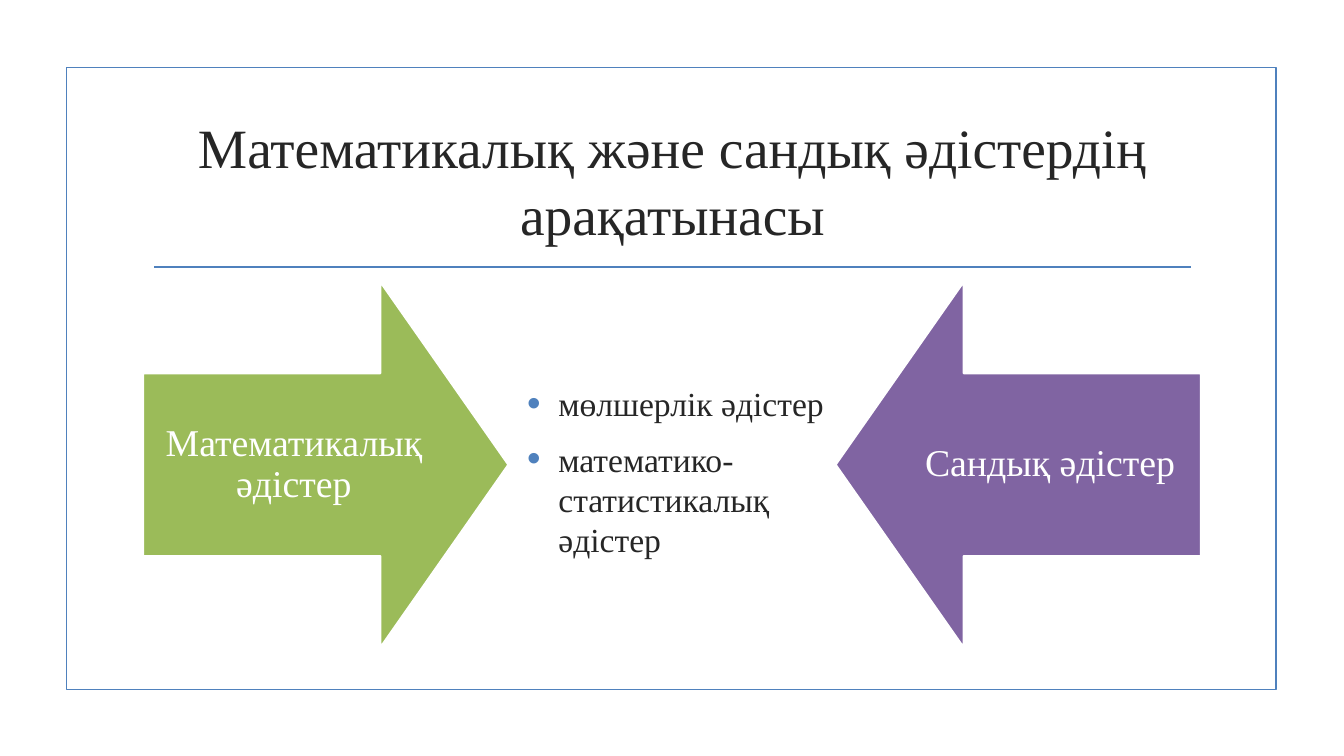
from dataclasses import dataclass

from lxml.etree import SubElement
from pptx import Presentation
from pptx.dml.color import RGBColor
from pptx.enum.shapes import MSO_CONNECTOR, MSO_SHAPE
from pptx.enum.text import MSO_ANCHOR, PP_ALIGN
from pptx.oxml.ns import qn
from pptx.util import Inches, Pt


@dataclass(frozen=True)
class Theme:
    font: str = "Times New Roman"
    ink: str = "262626"
    white: str = "FFFFFF"
    blue: str = "4F81BD"
    green: str = "9BBB59"
    violet: str = "8064A2"
    title: float = 39.6
    label: float = 27
    body: float = 24
    line: float = 1.25


THEME = Theme()


def apply(target, values):
    for name, value in values.items():
        setattr(target, name, value)


def stroke(line, color):
    line.color.rgb = RGBColor.from_string(color)
    line.width = Pt(THEME.line)


def add_text(slide, box, lines, size, color, frame, para):
    area = slide.shapes.add_textbox(*map(Inches, box)).text_frame
    apply(area, {"word_wrap": True, **frame})
    for index, line in enumerate(lines):
        part = area.paragraphs[0] if index == 0 else area.add_paragraph()
        run = part.add_run()
        run.text = line
        apply(part, para)
        apply(run.font, {"name": THEME.font, "size": Pt(size)})
        run.font.color.rgb = RGBColor.from_string(color)
    return area


def add_bullet(part):
    props = part._p.get_or_add_pPr()
    apply_indent = {"marL": Inches(0.31), "indent": -Inches(0.31)}
    for name, value in apply_indent.items():
        props.set(name, str(value))
    tint = SubElement(props, qn("a:buClr"))
    SubElement(tint, qn("a:srgbClr"), val=THEME.blue)
    SubElement(props, qn("a:buSzPct"), val="115000")
    SubElement(props, qn("a:buFont"), typeface="Arial")
    SubElement(props, qn("a:buChar"), char="•")


def draw_frame(slide, box):
    frame = slide.shapes.add_shape(MSO_SHAPE.RECTANGLE, *map(Inches, box))
    frame.shadow.inherit = False
    frame.fill.background()
    stroke(frame.line, THEME.blue)


def draw_title(slide, box, text):
    left, top, width, height = box
    add_text(slide, box, [text], THEME.title, THEME.ink,
             {"vertical_anchor": MSO_ANCHOR.MIDDLE},
             {"alignment": PP_ALIGN.CENTER})
    inset, level = 0.11, top + height + 0.15
    ends = (left + inset, level, left + width - inset, level)
    rule = slide.shapes.add_connector(MSO_CONNECTOR.STRAIGHT, *map(Inches, ends))
    stroke(rule.line, THEME.blue)
    SubElement(rule._element.spPr, qn("a:effectLst"))


def draw_arrow(slide, box, text, color, turn):
    left, top, width, height = box
    arrow = slide.shapes.add_shape(MSO_SHAPE.DOWN_ARROW, *map(Inches, box))
    arrow.shadow.inherit = False
    arrow.rotation = turn
    arrow.adjustments[0] = 0.5
    arrow.adjustments[1] = 0.35
    arrow.fill.solid()
    arrow.fill.fore_color.rgb = RGBColor.from_string(color)
    stroke(arrow.line, THEME.white)
    span = 2.99
    start = left if turn == 270 else left + width - span
    pad = Inches(0.2)
    sides = ("left", "top", "right", "bottom")
    add_text(slide, (start, top + height / 4, span, height / 2),
             [text], THEME.label, THEME.white,
             {"vertical_anchor": MSO_ANCHOR.MIDDLE,
              **{f"margin_{side}": pad for side in sides}},
             {"alignment": PP_ALIGN.CENTER, "line_spacing": 0.9})


def draw_list(slide, box, lines):
    area = add_text(slide, box, lines, THEME.body, THEME.ink,
                    {"vertical_anchor": MSO_ANCHOR.TOP},
                    {"space_after": Pt(6)})
    for part in area.paragraphs[1:]:
        part.space_before = Pt(THEME.body * 0.2)
    for part in area.paragraphs:
        add_bullet(part)


def main():
    deck = Presentation()
    apply(deck, {"slide_width": Inches(13.33), "slide_height": Inches(7.5)})
    slide = deck.slides.add_slide(deck.slide_layouts[6])
    draw_frame(slide, (0.66, 0.67, 12, 6.17))
    draw_title(slide, (1.42, 1.07, 10.5, 1.43),
               "Математикалық және сандық әдістердің арақатынасы")
    arrows = (
        (1.42, "Математикалық әдістер", THEME.green, 270),
        (8.29, "Сандық әдістер", THEME.violet, 90),
    )
    for left, text, color, turn in arrows:
        draw_arrow(slide, (left, 2.8, 3.62, 3.62), text, color, turn)
    draw_list(slide, (5.13, 3.75, 3.19, 2.21),
              ["мөлшерлік әдістер", "математико-статистикалық әдістер"])
    deck.save("out.pptx")


if __name__ == "__main__":
    main()
